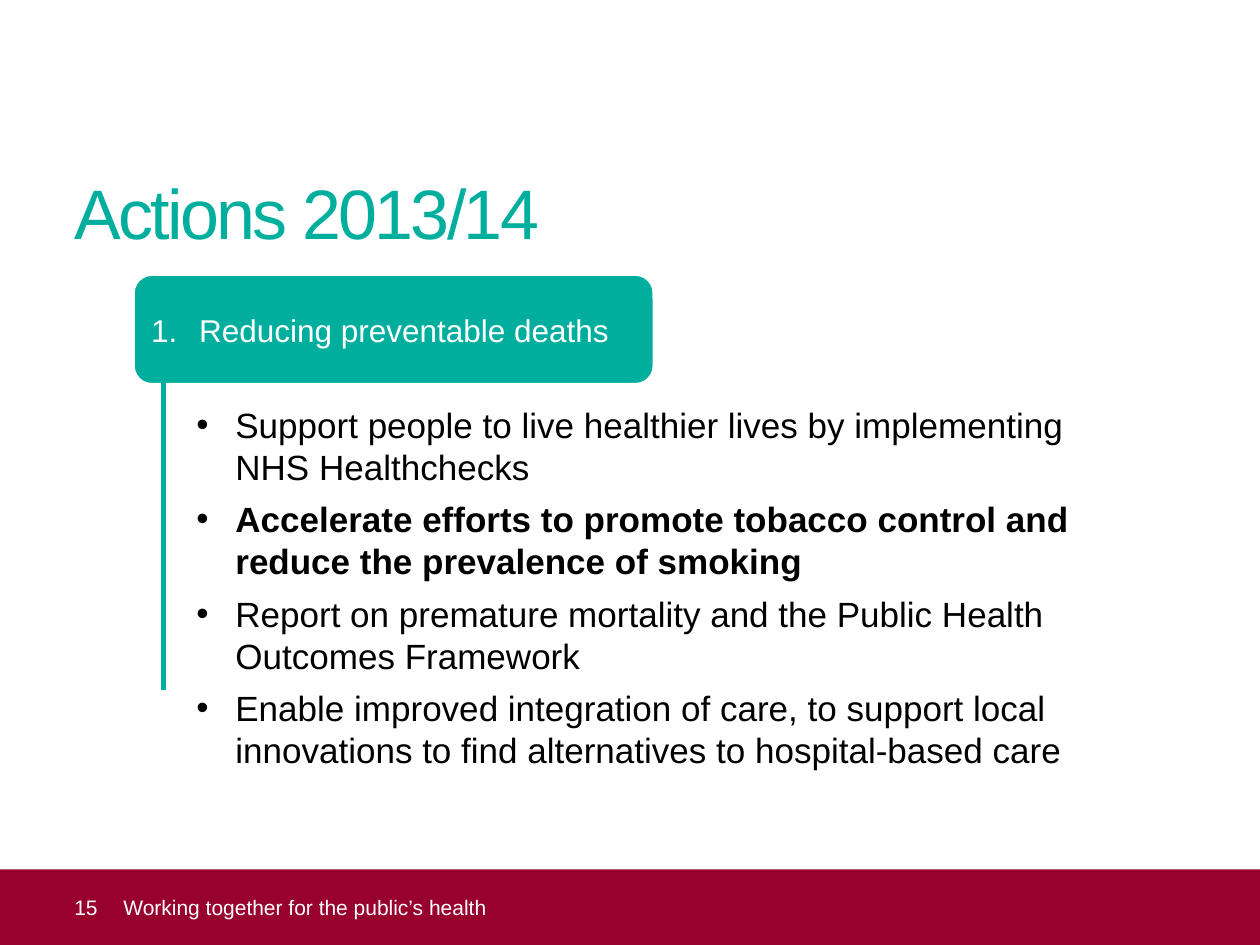
from dataclasses import dataclass

from lxml import etree
from pptx import Presentation
from pptx.dml.color import RGBColor
from pptx.enum.shapes import MSO_CONNECTOR, MSO_SHAPE
from pptx.enum.text import MSO_ANCHOR, PP_ALIGN
from pptx.oxml.ns import qn
from pptx.util import Inches, Pt

RECTANGLE = MSO_SHAPE.RECTANGLE
ROUNDED = MSO_SHAPE.ROUNDED_RECTANGLE
STRAIGHT = MSO_CONNECTOR.STRAIGHT
TOP, MIDDLE = MSO_ANCHOR.TOP, MSO_ANCHOR.MIDDLE
LEFT = PP_ALIGN.LEFT


@dataclass(frozen=True)
class Theme:
    font: str = "Arial"
    teal: RGBColor = RGBColor(0x00, 0xAE, 0x9E)
    crimson: RGBColor = RGBColor(0x98, 0x00, 0x2E)
    white: RGBColor = RGBColor(0xFF, 0xFF, 0xFF)
    black: RGBColor = RGBColor(0x00, 0x00, 0x00)
    title_size: int = 40
    action_size: int = 20
    heading_size: int = 18
    footer_size: int = 12
    action_leading: int = 24
    action_gap: int = 6


@dataclass(frozen=True)
class Box:
    left: float
    top: float
    width: float
    height: float

    def lengths(self) -> tuple:
        return tuple(Inches(v) for v in (self.left, self.top, self.width, self.height))


@dataclass(frozen=True)
class Action:
    text: str
    bold: bool = False


THEME = Theme()
ACTIONS = [
    Action("Support people to live healthier lives by implementing NHS Healthchecks"),
    Action("Accelerate efforts to promote tobacco control and reduce the prevalence of smoking", True),
    Action("Report on premature mortality and the Public Health Outcomes Framework"),
    Action("Enable improved integration of care, to support local innovations to find "
           "alternatives to hospital-based care"),
]


def format_frame(frame, anchor, margins=(0, 0, 0, 0)) -> None:
    left, top, right, bottom = (Inches(m) for m in margins)
    settings = {
        "word_wrap": True, "vertical_anchor": anchor,
        "margin_left": left, "margin_top": top,
        "margin_right": right, "margin_bottom": bottom,
    }
    for name, value in settings.items():
        setattr(frame, name, value)


def write(paragraph, text: str, size: int, color: RGBColor, bold: bool = False):
    paragraph.alignment = LEFT
    run = paragraph.add_run()
    run.text = text
    for name, value in {"name": THEME.font, "size": Pt(size), "bold": bold}.items():
        setattr(run.font, name, value)
    run.font.color.rgb = color
    return run


def indent(paragraph, margin: float, hanging: float = 0) -> None:
    properties = paragraph._p.get_or_add_pPr()
    properties.set("marL", str(Inches(margin)))
    properties.set("indent", str(-Inches(hanging)))


def add_marker(paragraph, tag: str, **attributes: str) -> None:
    font = etree.SubElement(paragraph._p.get_or_add_pPr(), qn("a:buFont"))
    font.set("typeface", THEME.font)
    marker = etree.SubElement(paragraph._p.get_or_add_pPr(), qn(tag))
    for name, value in attributes.items():
        marker.set(name, value)


def add_panel(slide, kind, box: Box, fill: RGBColor):
    panel = slide.shapes.add_shape(kind, *box.lengths())
    panel.shadow.inherit = False
    panel.fill.solid()
    panel.fill.fore_color.rgb = fill
    panel.line.fill.background()
    return panel


def add_title(slide) -> None:
    title = slide.shapes.title
    title.left, title.top, title.width, title.height = Box(0.59, 1.32, 8.78, 0.71).lengths()
    format_frame(title.text_frame, MIDDLE)
    run = write(title.text_frame.paragraphs[0], "Actions 2013/14", THEME.title_size, THEME.teal)
    run._r.get_or_add_rPr().set("spc", "-150")


def add_footer(slide) -> None:
    band = add_panel(slide, RECTANGLE, Box(0, 6.9, 10, 0.6), THEME.crimson)
    format_frame(band.text_frame, MIDDLE, (0, 0, 0.1, 0))
    page_number = band.text_frame.paragraphs[0]
    indent(page_number, 0.59)
    write(page_number, "15", THEME.footer_size, THEME.white)
    motto = slide.shapes.add_textbox(*Box(0.98, 6.9, 8.43, 0.6).lengths()).text_frame
    format_frame(motto, MIDDLE)
    write(motto.paragraphs[0], "Working together for the public’s health",
          THEME.footer_size, THEME.white)


def add_heading(slide) -> None:
    heading = add_panel(slide, ROUNDED, Box(1.06, 2.18, 4.13, 0.87), THEME.teal)
    heading.line.color.rgb = THEME.white
    heading.line.width = Pt(1.5)
    format_frame(heading.text_frame, MIDDLE, (0.1, 0.05, 0.1, 0.05))
    paragraph = heading.text_frame.paragraphs[0]
    indent(paragraph, 0.38, 0.38)
    add_marker(paragraph, "a:buAutoNum", type="arabicPeriod")
    write(paragraph, "Reducing preventable deaths", THEME.heading_size, THEME.white)


def add_actions(slide, actions: list[Action]) -> None:
    frame = slide.shapes.add_textbox(*Box(1.46, 3.15, 7.48, 3.05).lengths()).text_frame
    format_frame(frame, TOP, (0.1, 0.05, 0.1, 0.05))
    for index, action in enumerate(actions):
        paragraph = frame.add_paragraph() if index else frame.paragraphs[0]
        indent(paragraph, 0.31, 0.31)
        add_marker(paragraph, "a:buChar", char="•")
        paragraph.line_spacing = Pt(THEME.action_leading)
        paragraph.space_before = Pt(THEME.action_gap if index else 0)
        write(paragraph, action.text, THEME.action_size, THEME.black, action.bold)


def add_stem(slide) -> None:
    ends = (Inches(v) for v in (1.3, 2.88, 1.3, 5.48))
    stem = slide.shapes.add_connector(STRAIGHT, *ends)
    stem.line.color.rgb = THEME.teal
    stem.line.width = Pt(3)
    etree.SubElement(stem._element.spPr, qn("a:effectLst"))


def main() -> None:
    presentation = Presentation()
    presentation.slide_width = Inches(10)
    presentation.slide_height = Inches(7.5)
    slide = presentation.slides.add_slide(presentation.slide_layouts.get_by_name("Title Only"))
    add_title(slide)
    add_footer(slide)
    add_heading(slide)
    add_actions(slide, ACTIONS)
    add_stem(slide)
    presentation.save("out.pptx")


if __name__ == "__main__":
    main()
